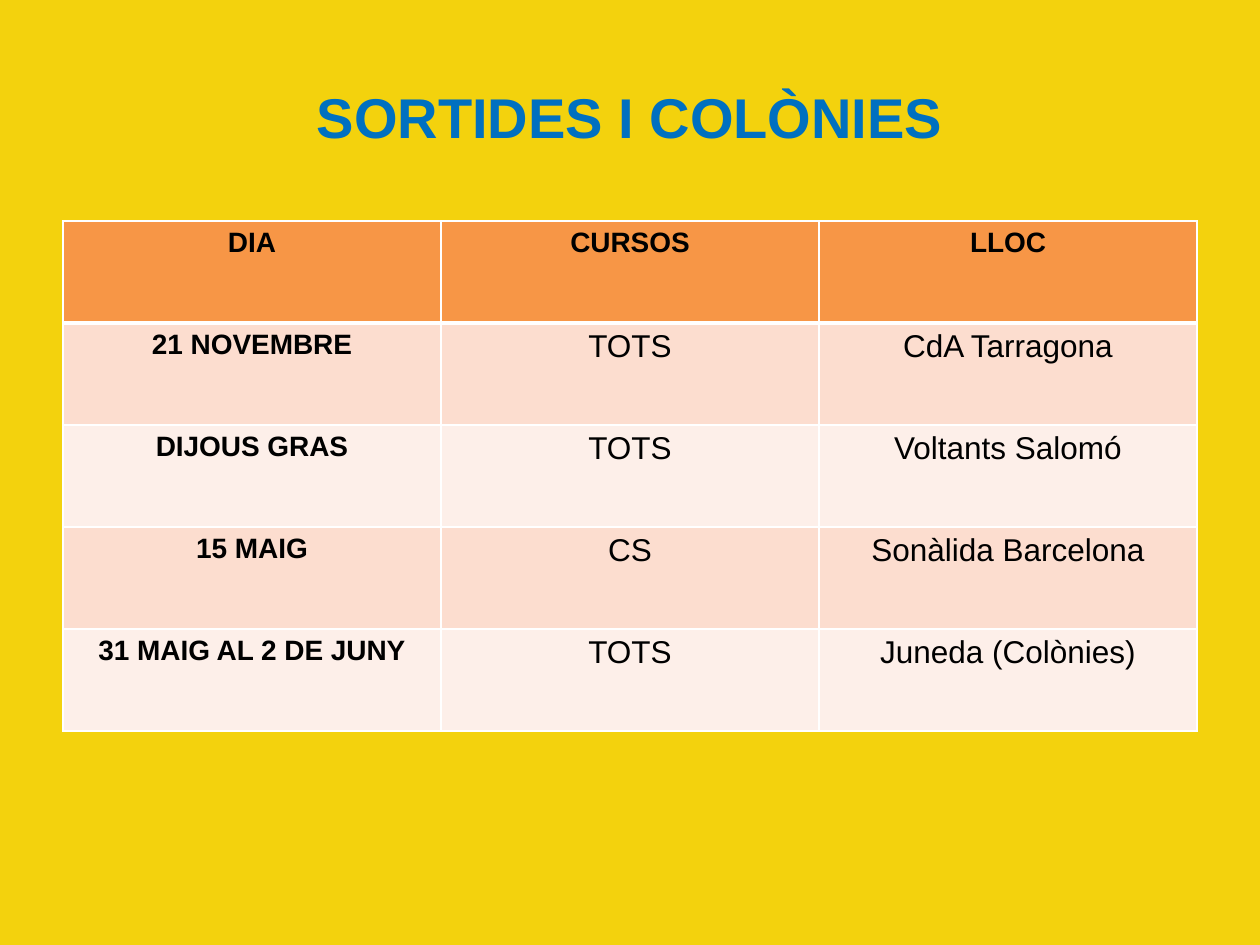
"""Build the slide of outings and camps with its table of dates."""
from lxml import etree
from pptx import Presentation
from pptx.dml.color import RGBColor
from pptx.enum.text import MSO_ANCHOR, PP_ALIGN
from pptx.oxml.ns import qn
from pptx.util import Pt

TITLE = "SORTIDES I COLÒNIES"
ROWS = [
    ("DIA", "CURSOS", "LLOC"),
    ("21 NOVEMBRE", "TOTS", "CdA Tarragona"),
    ("DIJOUS GRAS", "TOTS", "Voltants Salomó"),
    ("15 MAIG", "CS", "Sonàlida Barcelona"),
    ("31 MAIG AL 2 DE JUNY", "TOTS", "Juneda (Colònies)"),
]

CENTER = PP_ALIGN.CENTER
MIDDLE = MSO_ANCHOR.MIDDLE
YELLOW = RGBColor(0xF3, 0xD2, 0x0D)
BLUE = RGBColor(0x00, 0x70, 0xC0)
BLACK = RGBColor(0x00, 0x00, 0x00)
WHITE = RGBColor(0xFF, 0xFF, 0xFF)
ORANGE = RGBColor(0xF7, 0x96, 0x46)
BANDS = (RGBColor(0xFD, 0xEF, 0xE9), RGBColor(0xFC, 0xDD, 0xCF))
FONT = "Arial"
LEFT, WIDTH = 63, 1134
ROW_H = 102


def px(n):
    return round(n * 914400 / 126)


def write(frame, text, size, color, bold):
    para = frame.paragraphs[0]
    para.alignment = CENTER
    run = para.add_run()
    run.text = text
    font = run.font
    font.name, font.size, font.bold = FONT, Pt(size), bold
    font.color.rgb = color


def border(cell, widths):
    props = cell._tc.get_or_add_tcPr()
    for i, (side, width) in enumerate(widths.items()):
        line = etree.Element(qn("a:ln" + side), w=str(Pt(width)))
        fill = etree.SubElement(line, qn("a:solidFill"))
        etree.SubElement(fill, qn("a:srgbClr"), val=str(WHITE))
        props.insert(i, line)


def add_title(slide):
    title = slide.shapes.title
    title.left, title.top = px(LEFT), px(38)
    title.width, title.height = px(WIDTH), px(157)
    title.text_frame.vertical_anchor = MIDDLE
    write(title.text_frame, TITLE, 32, BLUE, True)


def add_dates(slide):
    count = len(ROWS)
    table = slide.shapes.add_table(
        count, len(ROWS[0]), px(LEFT), px(221), px(WIDTH), px(ROW_H * count)
    ).table
    for r, row in enumerate(ROWS):
        for c, text in enumerate(row):
            cell = table.cell(r, c)
            cell.fill.solid()
            cell.fill.fore_color.rgb = BANDS[r % 2] if r else ORANGE
            head = r == 0 or c == 0
            write(cell.text_frame, text, 16 if head else 18, BLACK, head)
            top = 3 if r == 1 else 1
            base = 3 if r == 0 else 1
            border(cell, {"L": 1, "R": 1, "T": top, "B": base})


def main():
    deck = Presentation()
    deck.slide_width, deck.slide_height = px(1260), px(945)
    slide = deck.slides.add_slide(deck.slide_layouts[5])
    slide.background.fill.solid()
    slide.background.fill.fore_color.rgb = YELLOW
    add_title(slide)
    add_dates(slide)
    deck.save("out.pptx")


if __name__ == "__main__":
    main()
